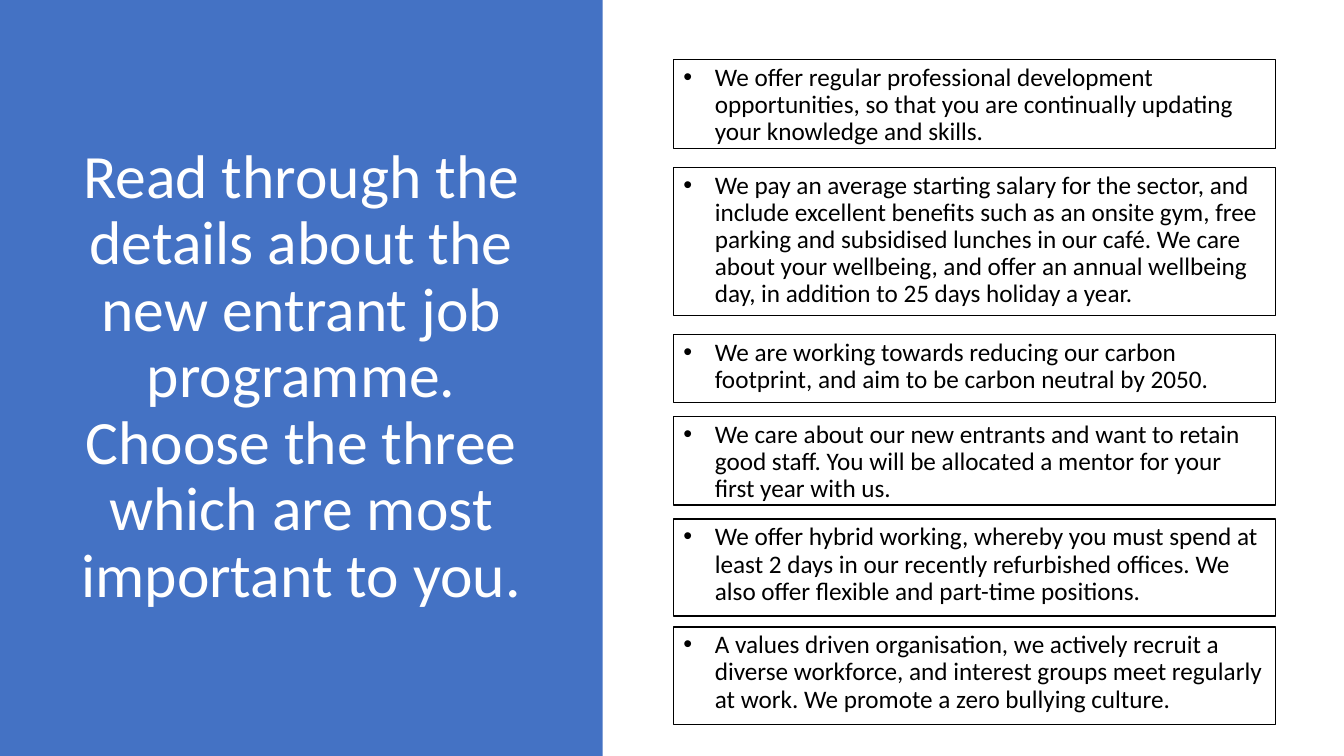
from dataclasses import dataclass

from lxml.etree import SubElement
from pptx import Presentation
from pptx.dml.color import RGBColor
from pptx.enum.shapes import MSO_SHAPE
from pptx.enum.text import MSO_ANCHOR, PP_ALIGN
from pptx.oxml.ns import qn
from pptx.shapes.autoshape import Shape
from pptx.slide import Slide
from pptx.text.text import TextFrame
from pptx.util import Pt


@dataclass(frozen=True)
class Theme:
    blue: RGBColor = RGBColor(0x44, 0x72, 0xC4)
    white: RGBColor = RGBColor(0xFF, 0xFF, 0xFF)
    black: RGBColor = RGBColor(0x00, 0x00, 0x00)
    font: str = "Calibri"
    title_size: float = 44
    body_size: float = 18


@dataclass(frozen=True)
class Benefit:
    top: float
    height: float
    text: str


THEME = Theme()
SLIDE_WIDTH, SLIDE_HEIGHT = 960, 540
PANEL_WIDTH = 430.5
BOX_LEFT, BOX_WIDTH = 481, 430
BULLET_INDENT = 22.5

TITLE = ("Read through the details about the new entrant job programme. "
         "Choose the three which are most important to you.")

BENEFITS = [
    Benefit(42.5, 63.4, "We offer regular professional development opportunities, so that "
            "you are continually updating your knowledge and skills."),
    Benefit(119.5, 105.8, "We pay an average starting salary for the sector, and include "
            "excellent benefits such as an onsite gym, free parking and subsidised lunches "
            "in our café. We care about your wellbeing, and offer an annual wellbeing day, "
            "in addition to 25 days holiday a year."),
    Benefit(239, 48.4, "We are working towards reducing our carbon footprint, and aim to be "
            "carbon neutral by 2050."),
    Benefit(297.4, 63.4, "We care about our new entrants and want to retain good staff. You "
            "will be allocated a mentor for your first year with us."),
    Benefit(370.8, 69.2, "We offer hybrid working, whereby you must spend at least 2 days in "
            "our recently refurbished offices. We also offer flexible and part-time positions."),
    Benefit(447.8, 69.6, "A values driven organisation, we actively recruit a diverse "
            "workforce, and interest groups meet regularly at work. We promote a zero "
            "bullying culture."),
]


def apply_format(target: object, values: dict[str, object]) -> None:
    for name, value in values.items():
        setattr(target, name, value)


def add_rectangle(slide: Slide, left: float, top: float, width: float, height: float,
                  fill: RGBColor) -> Shape:
    shape = slide.shapes.add_shape(MSO_SHAPE.RECTANGLE, Pt(left), Pt(top), Pt(width), Pt(height))
    shape.shadow.inherit = False
    shape.fill.solid()
    shape.fill.fore_color.rgb = fill
    shape.line.fill.background()
    return shape


def write_text(frame: TextFrame, text: str, size: float, color: RGBColor,
               anchor: MSO_ANCHOR, alignment: PP_ALIGN, space_after: float = 0) -> None:
    apply_format(frame, {"word_wrap": True, "vertical_anchor": anchor})
    paragraph = frame.paragraphs[0]
    apply_format(paragraph, {"alignment": alignment, "line_spacing": 0.9,
                             "space_after": Pt(space_after)})
    run = paragraph.add_run()
    run.text = text
    apply_format(run.font, {"name": THEME.font, "size": Pt(size)})
    run.font.color.rgb = color


def add_bullet(frame: TextFrame) -> None:
    properties = frame.paragraphs[0]._p.get_or_add_pPr()
    properties.set("marL", str(Pt(BULLET_INDENT)))
    properties.set("indent", str(-Pt(BULLET_INDENT)))
    SubElement(properties, qn("a:buFont")).set("typeface", "Arial")
    SubElement(properties, qn("a:buChar")).set("char", "•")


def add_benefit(slide: Slide, benefit: Benefit) -> None:
    box = add_rectangle(slide, BOX_LEFT, benefit.top, BOX_WIDTH, benefit.height, THEME.white)
    box.line.color.rgb = THEME.black
    box.line.width = Pt(1)
    write_text(box.text_frame, benefit.text, THEME.body_size, THEME.black,
               MSO_ANCHOR.TOP, PP_ALIGN.LEFT, space_after=6)
    add_bullet(box.text_frame)


def place_title(slide: Slide) -> None:
    title = slide.shapes.title
    apply_format(title, {"left": Pt(49), "top": Pt(50.4), "width": Pt(332.6), "height": Pt(439.2)})
    write_text(title.text_frame, TITLE, THEME.title_size, THEME.white,
               MSO_ANCHOR.MIDDLE, PP_ALIGN.CENTER)
    # Bring the title in front of the panel
    slide.shapes._spTree.append(title._element)


def main() -> None:
    presentation = Presentation()
    apply_format(presentation, {"slide_width": Pt(SLIDE_WIDTH), "slide_height": Pt(SLIDE_HEIGHT)})
    slide = presentation.slides.add_slide(presentation.slide_layouts[5])

    # Blue panel with the instruction
    add_rectangle(slide, 0, 0, PANEL_WIDTH, SLIDE_HEIGHT, THEME.blue)
    place_title(slide)

    # Column of benefits
    for benefit in BENEFITS:
        add_benefit(slide, benefit)

    presentation.save("out.pptx")


if __name__ == "__main__":
    main()
